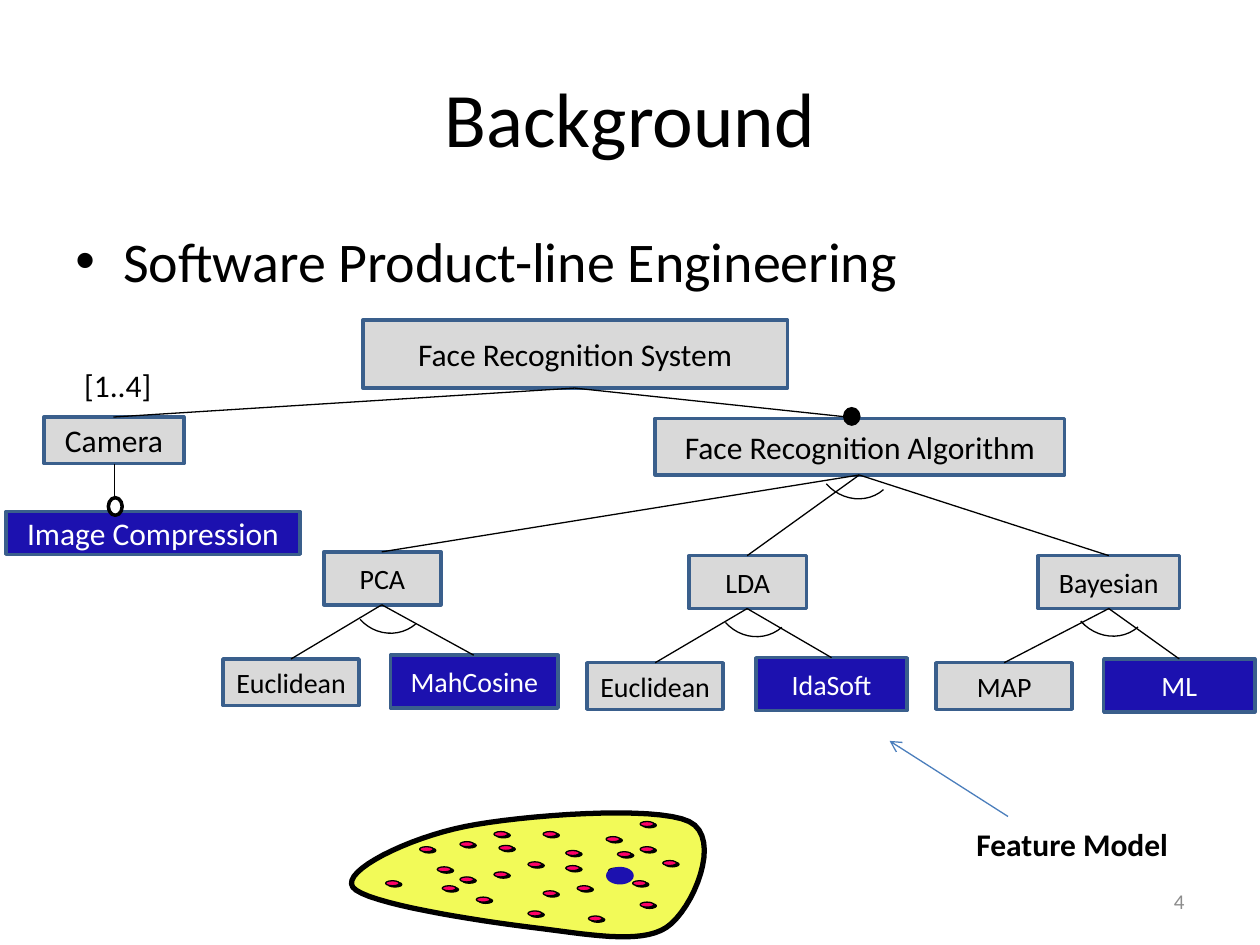
from lxml import etree
from pptx import Presentation
from pptx.dml.color import RGBColor
from pptx.enum.shapes import MSO_CONNECTOR, MSO_SHAPE
from pptx.enum.text import MSO_ANCHOR, PP_ALIGN
from pptx.oxml.ns import qn
from pptx.util import Pt

PX = 9144
RECT, OVAL, ARC = MSO_SHAPE.RECTANGLE, MSO_SHAPE.OVAL, MSO_SHAPE.ARC
STRAIGHT = MSO_CONNECTOR.STRAIGHT
TOP, MIDDLE = MSO_ANCHOR.TOP, MSO_ANCHOR.MIDDLE
LEFT, CENTER, RIGHT = PP_ALIGN.LEFT, PP_ALIGN.CENTER, PP_ALIGN.RIGHT
BLACK, WHITE, GRAY, BLUE = "000000", "FFFFFF", "D9D9D9", "1C11AF"
BORDER, YELLOW, PINK = "3A5F8C", "F2FA58", "FF0066"


def paint(shape, fill, line, width):
    shape.shadow.inherit = False
    for part, color in ((shape.fill, fill), (shape.line.fill, line)):
        if color:
            part.solid()
            part.fore_color.rgb = RGBColor.from_string(color)
        else:
            part.background()
    if line:
        shape.line.width = Pt(width)


def write(shape, text, size, color, align, anchor, bold=False):
    frame = shape.text_frame
    frame.word_wrap = True
    frame.vertical_anchor = anchor
    frame.text = text
    para = frame.paragraphs[0]
    para.alignment = align
    font = para.runs[0].font
    font.name = "Calibri"
    font.size = Pt(size)
    font.bold = bold
    font.color.rgb = RGBColor.from_string(color)
    return para


deck = Presentation()
deck.slide_width = 1000 * PX
deck.slide_height = 750 * PX
page = deck.slides.add_slide(deck.slide_layouts[6])
shapes = page.shapes

texts = [
    ("Background", (50, 30, 900, 125), 44, BLACK, CENTER, MIDDLE, False),
    ("Software Product-line Engineering", (50, 175, 900, 495), 32, BLACK, LEFT, TOP, False),
    ("[1..4]", (57, 286, 86, 40), 18, BLACK, LEFT, TOP, False),
    ("4", (717, 695, 233, 40), 12, "8C8C8C", RIGHT, MIDDLE, False),
    ("Feature Model", (754, 634, 194, 72), 18, BLACK, CENTER, MIDDLE, True),
]
paras = {}
for text, place, *style in texts:
    box = shapes.add_textbox(*[value * PX for value in place])
    paras[text] = write(box, text, *style)

topic = paras["Software Product-line Engineering"]
topic.space_before = Pt(6.4)
topic_format = topic._p.get_or_add_pPr()
topic_format.set("marL", str(38 * PX))
topic_format.set("indent", str(-38 * PX))
etree.SubElement(topic_format, qn("a:buFont")).set("typeface", "Arial")
etree.SubElement(topic_format, qn("a:buChar")).set("char", "•")

features = {
    "system": ("Face Recognition System", 288, 254, 337, 54, GRAY, 18),
    "camera": ("Camera", 35, 331, 111, 37, GRAY, 18),
    "compression": ("Image Compression", 5, 406, 233, 34, BLUE, 18),
    "algorithm": ("Face Recognition Algorithm", 520, 332, 325, 45, GRAY, 18),
    "pca": ("PCA", 257, 438, 93, 42, GRAY, 16),
    "pca euclidean": ("Euclidean", 177, 523, 108, 37, GRAY, 16),
    "mahcosine": ("MahCosine", 310, 520, 133, 42, BLUE, 16),
    "lda": ("LDA", 547, 441, 93, 42, GRAY, 16),
    "lda euclidean": ("Euclidean", 466, 526, 108, 37, GRAY, 16),
    "idasoft": ("IdaSoft", 600, 522, 120, 42, BLUE, 16),
    "bayesian": ("Bayesian", 824, 441, 112, 42, GRAY, 16),
    "map": ("MAP", 743, 526, 108, 37, GRAY, 16),
    "ml": ("ML", 876, 523, 120, 42, BLUE, 16),
}
for text, left, top, width, height, fill, size in features.values():
    node = shapes.add_shape(RECT, left * PX, top * PX, width * PX, height * PX)
    paint(node, fill, BORDER, 2)
    write(node, text, size, WHITE if fill == BLUE else BLACK, CENTER, MIDDLE)
    node.text_frame.margin_left = node.text_frame.margin_right = 0

children = {
    "system": ["camera", "algorithm"],
    "algorithm": ["pca", "lda", "bayesian"],
    "pca": ["pca euclidean", "mahcosine"],
    "lda": ["lda euclidean", "idasoft"],
    "bayesian": ["map", "ml"],
}
links = [(91, 368, 91, 408, BLACK)]
for parent, names in children.items():
    _, left, top, width, height, *_ = features[parent]
    for name in names:
        _, child_left, child_top, child_width, *_ = features[name]
        links.append((left + width // 2, top + height,
                      child_left + child_width // 2, child_top, BLACK))
links.append((800, 648, 706, 588, "4B7EBC"))
for x1, y1, x2, y2, color in links:
    link = shapes.add_connector(STRAIGHT, x1 * PX, y1 * PX, x2 * PX, y2 * PX)
    link.line.color.rgb = RGBColor.from_string(color)
    link.line.width = Pt(0.75)
    etree.SubElement(link._element.spPr, qn("a:effectLst"))
etree.SubElement(link.line._get_or_add_ln(), qn("a:tailEnd")).set("type", "arrow")

for left, top, height in [(278, 439, 64), (568, 441, 65), (850, 439, 67), (648, 330, 67)]:
    arc = shapes.add_shape(ARC, left * PX, top * PX, 62 * PX, height * PX)
    arc.rotation = 138.6
    paint(arc, None, BLACK, 0.75)

mandatory = shapes.add_shape(OVAL, 669 * PX, 323 * PX, 14 * PX, 15 * PX)
paint(mandatory, BLACK, None, 0)
optional = shapes.add_shape(OVAL, 86 * PX, 395 * PX, 11 * PX, 14 * PX)
paint(optional, WHITE, BLACK, 2)

start = (369, 656)
curves = [
    ((324, 665), (271, 691), (280, 704)),
    ((289, 717), (381, 731), (422, 736)),
    ((464, 741), (508, 750), (529, 736)),
    ((550, 722), (574, 665), (547, 652)),
    ((520, 639), (413, 647), (369, 656)),
]
STEPS = 16
points = []
anchor = start
for first, second, end in curves:
    for step in range(1, STEPS + 1):
        t = step / STEPS
        weights = ((1 - t) ** 3, 3 * t * (1 - t) ** 2, 3 * t ** 2 * (1 - t), t ** 3)
        corners = (anchor, first, second, end)
        points.append([sum(w * corner[axis] for w, corner in zip(weights, corners)) * PX
                       for axis in (0, 1)])
    anchor = end
builder = shapes.build_freeform(start[0] * PX, start[1] * PX)
builder.add_line_segments(points[:-1], close=True)
paint(builder.convert_to_shape(), YELLOW, BLACK, 3)

products = [
    (431, 660), (449, 675), (396, 671), (449, 687), (458, 703), (481, 688),
    (467, 727), (508, 716), (378, 712), (347, 688), (392, 692), (508, 672),
    (526, 683), (351, 703), (365, 668), (306, 699), (431, 707), (419, 723),
    (392, 660), (490, 676), (333, 672), (481, 664), (502, 699), (419, 684),
    (508, 652), (365, 696),
]
chosen = (481, 688)
for left, top in products:
    shade = shapes.add_shape(OVAL, (left + 2) * PX, (top + 1) * PX, 11 * PX, 4 * PX)
    paint(shade, BLACK, BLACK, 0.75)
    width, height = (22, 14) if (left, top) == chosen else (11, 4)
    dot = shapes.add_shape(OVAL, left * PX, top * PX, width * PX, height * PX)
    if (left, top) == chosen:
        paint(dot, BLUE, None, 0)
    else:
        paint(dot, PINK, BLACK, 0.75)

deck.save("out.pptx")
